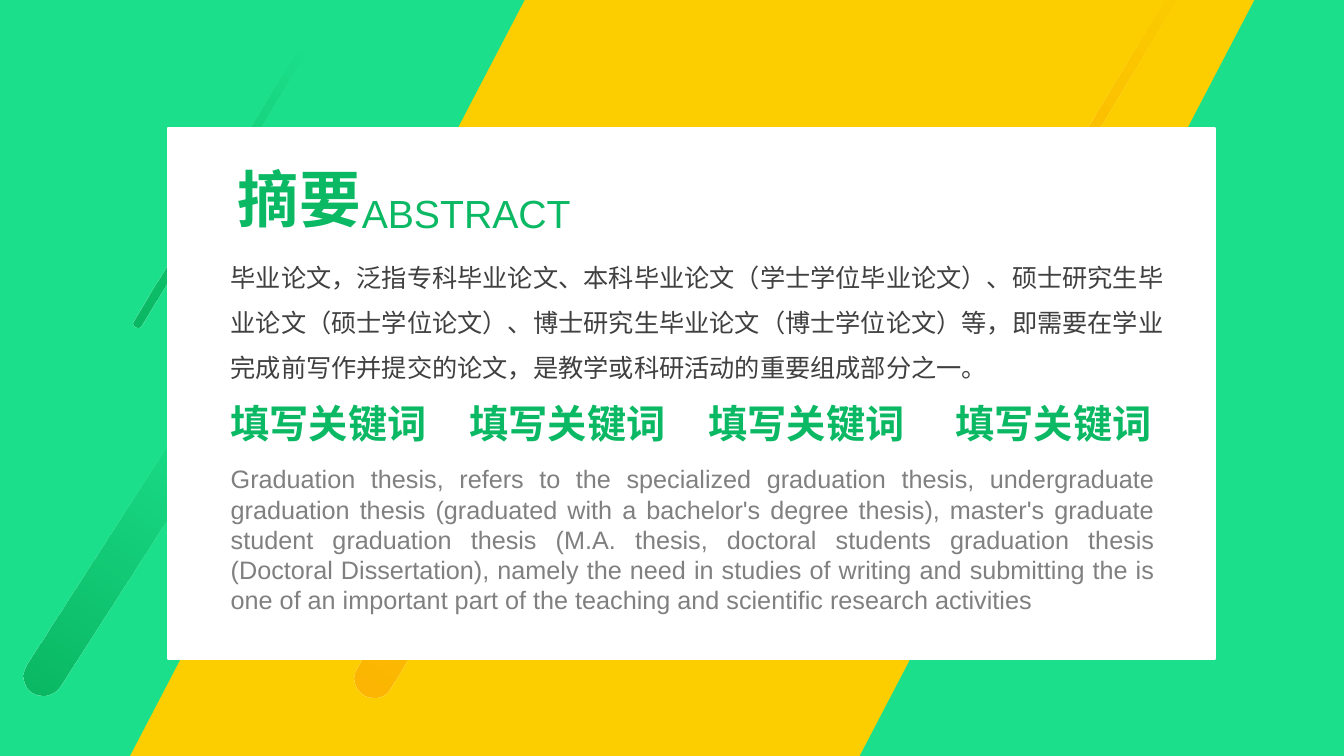
from lxml import etree
from pptx import Presentation
from pptx import util as u
from pptx.dml import color
from pptx.enum import shapes, text
from pptx.oxml import ns

THEME = {
    "font": "Arial",
    "mint": "1CDF8B", "yellow": "FCCE00", "white": "FFFFFF",
    "amber": "FCB504", "green": "0BB863", "dark": "404040", "gray": "808080",
    "title": 44, "heading": 28, "body": 18,
}

CHINESE = (
    "毕业论文，泛指专科毕业论文、本科毕业论文（学士学位毕业论文）、硕士研究生毕业论文"
    "（硕士学位论文）、博士研究生毕业论文（博士学位论文）等，即需要在学业完成前写作并提交的论文，"
    "是教学或科研活动的重要组成部分之一。"
)
ENGLISH = (
    "Graduation thesis, refers to the specialized graduation thesis, undergraduate "
    "graduation thesis (graduated with a bachelor's degree thesis), master's graduate "
    "student graduation thesis (M.A. thesis, doctoral students graduation thesis "
    "(Doctoral Dissertation), namely the need in studies of writing and submitting the is "
    "one of an important part of the teaching and scientific research activities"
)
KEYWORD = "填写关键词"
KEYWORD_LEFTS = [2.19, 4.56, 6.93, 9.38]

STREAK_LENGTH = 3.19
STREAKS = [
    (4.23, 3.93, 0.39, 210.8, "amber"),
    (10.87, -0.45, 0.1, 210.9, "amber"),
    (0.99, 3.93, 0.39, 212.5, "green"),
    (2.12, 0.28, 0.09, 210.9, "green"),
]

LABELS = [
    ((2.26, 1.55, 1.44, 0.84), "摘要", "title", True),
    ((3.49, 1.83, 2.3, 0.57), "ABSTRACT", "heading", False),
] + [((left, 3.91, 2.17, 0.57), KEYWORD, "heading", True) for left in KEYWORD_LEFTS]


def rgb(name):
    return color.RGBColor.from_string(THEME[name])


def inches(frame):
    return [u.Inches(value) for value in frame]


def add_block(page, kind, frame, fill=None, adjust=None):
    block = page.shapes.add_shape(kind, *inches(frame))
    block.shadow.inherit = False
    block.line.fill.background()
    if fill:
        block.fill.solid()
        block.fill.fore_color.rgb = rgb(fill)
    if adjust is not None:
        block.adjustments[0] = adjust
    return block


def add_streak(page, left, top, width, rotation, tint):
    streak = add_block(page, shapes.MSO_SHAPE.ROUNDED_RECTANGLE,
                       (left, top, width, STREAK_LENGTH), adjust=0.5)
    streak.rotation = rotation
    streak.fill.gradient()
    streak.fill.gradient_angle = 270
    for stop, position in zip(streak.fill.gradient_stops, (0, 1)):
        stop.position = position
        stop.color.rgb = rgb(tint)
    faded = list(streak.element.iter(ns.qn("a:srgbClr")))[-1]
    etree.SubElement(faded, ns.qn("a:alpha")).set("val", "0")


def add_text(page, frame, words, size, tint, bold=False, wrap=False, align=None, spacing=None):
    box = page.shapes.add_textbox(*inches(frame))
    box.text_frame.word_wrap = wrap
    box.text_frame.auto_size = text.MSO_AUTO_SIZE.SHAPE_TO_FIT_TEXT
    para = box.text_frame.paragraphs[0]
    para.text = words
    para.alignment = align
    para.line_spacing = spacing
    span = para.runs[0]
    span.font.name = THEME["font"]
    span.font.size = u.Pt(THEME[size])
    span.font.bold = bold
    span.font.color.rgb = rgb(tint)


def main():
    deck = Presentation()
    deck.slide_width, deck.slide_height = inches((13.33, 7.5))
    page = deck.slides.add_slide(deck.slide_layouts[6])

    add_block(page, shapes.MSO_SHAPE.RECTANGLE, (0, 0, 13.33, 7.5), "mint")
    add_block(page, shapes.MSO_SHAPE.PARALLELOGRAM, (1.29, 0, 11.15, 7.5), "yellow", 0.522)
    for streak in STREAKS:
        add_streak(page, *streak)
    card = add_block(page, shapes.MSO_SHAPE.ROUNDED_RECTANGLE,
                     (1.67, 1.27, 10.38, 5.27), "white", 0)
    card.line.color.rgb = rgb("white")
    card.line.width = u.Pt(1.5)

    add_text(page, (2.19, 2.4, 9.6, 1.46), CHINESE, "body", "dark", wrap=True, spacing=1.5)
    add_text(page, (2.19, 4.55, 9.36, 1.62), ENGLISH, "body", "gray", wrap=True,
             align=text.PP_ALIGN.JUSTIFY)
    for frame, words, size, bold in LABELS:
        add_text(page, frame, words, size, "green", bold)

    deck.save("out.pptx")


if __name__ == "__main__":
    main()
